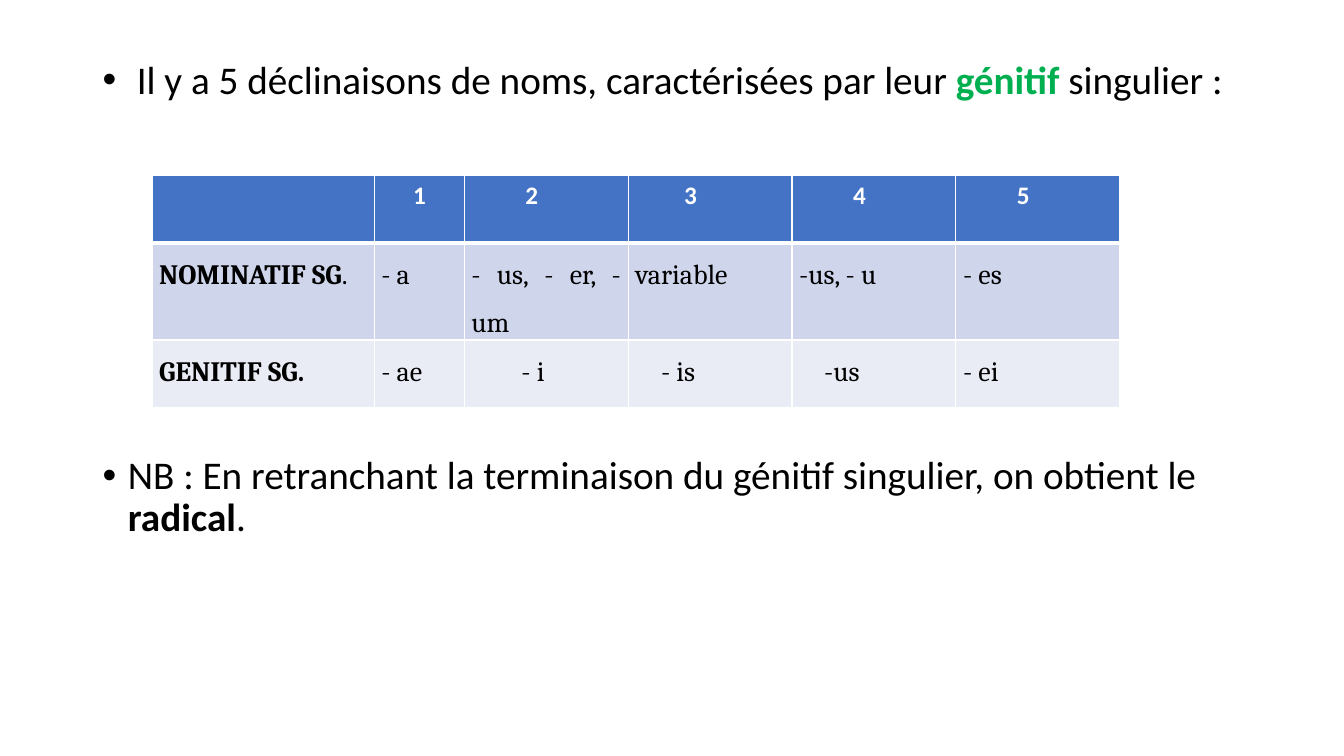
import pptx
import pptx.util
import pptx.dml.color
import pptx.enum.text
import pptx.oxml
import pptx.oxml.ns

Cm = pptx.util.Cm
Pt = pptx.util.Pt
Align = pptx.enum.text.PP_ALIGN
Anchor = pptx.enum.text.MSO_ANCHOR
tone = {
    "ink": "000000", "white": "FFFFFF", "green": "00B050",
    "head": "4472C4", "band": "CFD5EA", "pale": "E9EBF5",
}


def add_run(para, text, size, face, color="ink", bold=False):
    run = para.add_run()
    run.text = text
    look = {"size": Pt(size), "name": face, "bold": bold}
    for key, value in look.items():
        setattr(run.font, key, value)
    run.font.color.rgb = pptx.dml.color.RGBColor.from_string(tone[color])


def add_edge(cell, side, width):
    edge = pptx.oxml.parse_xml(
        f'<a:ln{side} {pptx.oxml.ns.nsdecls("a")} w="{Pt(width)}">'
        f'<a:solidFill><a:srgbClr val="{tone["white"]}"/></a:solidFill>'
        f'</a:ln{side}>')
    cell._tc.get_or_add_tcPr().append(edge)


deck = pptx.Presentation()
deck.slide_width = Cm(33.87)
deck.slide_height = Cm(19.05)
slide = deck.slides.add_slide(deck.slide_layouts[1])
title = slide.shapes.title.element
title.getparent().remove(title)

body = slide.placeholders[1]
place = {"left": Cm(2.33), "top": Cm(1.4), "width": Cm(29.21), "height": Cm(15.77)}
for key, value in place.items():
    setattr(body, key, value)
frame = body.text_frame
form = {"word_wrap": True, "vertical_anchor": Anchor.TOP,
        "auto_size": pptx.enum.text.MSO_AUTO_SIZE.NONE}
for key, value in form.items():
    setattr(frame, key, value)

points = [
    (10, [(" Il y a 5 déclinaisons de noms, caractérisées par leur ", "ink", False),
          ("génitif", "green", True), (" singulier :", "ink", False)]),
    (252, [("NB : En retranchant la terminaison du génitif singulier, on obtient le ", "ink", False),
           ("radical", "ink", True), (".", "ink", False)]),
]
for num, (gap, runs) in enumerate(points):
    para = frame.add_paragraph() if num else frame.paragraphs[0]
    form = {"line_spacing": 0.9, "space_before": Pt(gap), "space_after": Pt(0)}
    for key, value in form.items():
        setattr(para, key, value)
    props = para._p.get_or_add_pPr()
    props.set("marL", str(Cm(0.64)))
    props.set("indent", str(Cm(-0.64)))
    for text, color, bold in runs:
        add_run(para, text, 28, "Calibri", color, bold)

wides = [5.6, 2.27] + [4.13] * 4
highs = [1.7, 2.4, 1.7]
grid = slide.shapes.add_table(
    3, 6, Cm(3.83), Cm(4.43), Cm(sum(wides)), Cm(sum(highs))).table
for col, wide in zip(grid.columns, wides):
    col.width = Cm(wide)
for row, high in zip(grid.rows, highs):
    row.height = Cm(high)

texts = [
    ["", "1", "2", "3", "4", "5"],
    ["NOMINATIF SG", "- a", "- us, - er, - um", "variable", "-us, - u", "- es"],
    ["GENITIF SG.", "- ae", "- i", "- is", "-us", "- ei"],
]
insets = [
    [0.25, 0.98, 1.54, 1.41, 1.54, 1.54],
    [0.18] * 6,
    [0.18, 0.18, 1.44, 0.83, 0.81, 0.18],
]
fills = ["head", "band", "pale"]
for i, words in enumerate(texts):
    top = i == 0
    for j, text in enumerate(words):
        cell = grid.cell(i, j)
        for side in "LRTB":
            thick = (top and side == "B") or (i == 1 and side == "T")
            add_edge(cell, side, 3 if thick else 1)
        cell.fill.solid()
        cell.fill.fore_color.rgb = pptx.dml.color.RGBColor.from_string(tone[fills[i]])
        pad = Cm(0.13 if top else 0)
        form = {"margin_left": Cm(insets[i][j]), "margin_right": Cm(0.25 if top else 0.18),
                "margin_top": pad, "margin_bottom": pad, "vertical_anchor": Anchor.TOP}
        for key, value in form.items():
            setattr(cell, key, value)
        para = cell.text_frame.paragraphs[0]
        para.alignment = Align.LEFT if top else Align.JUSTIFY
        para.line_spacing = 1.0 if top else 1.5
        if text:
            add_run(para, text, 18 if top else 20, "Calibri" if top else "Cambria",
                    "white" if top else "ink", top or j == 0)
add_run(grid.cell(1, 0).text_frame.paragraphs[0], ".", 20, "Cambria")

deck.save("out.pptx")
